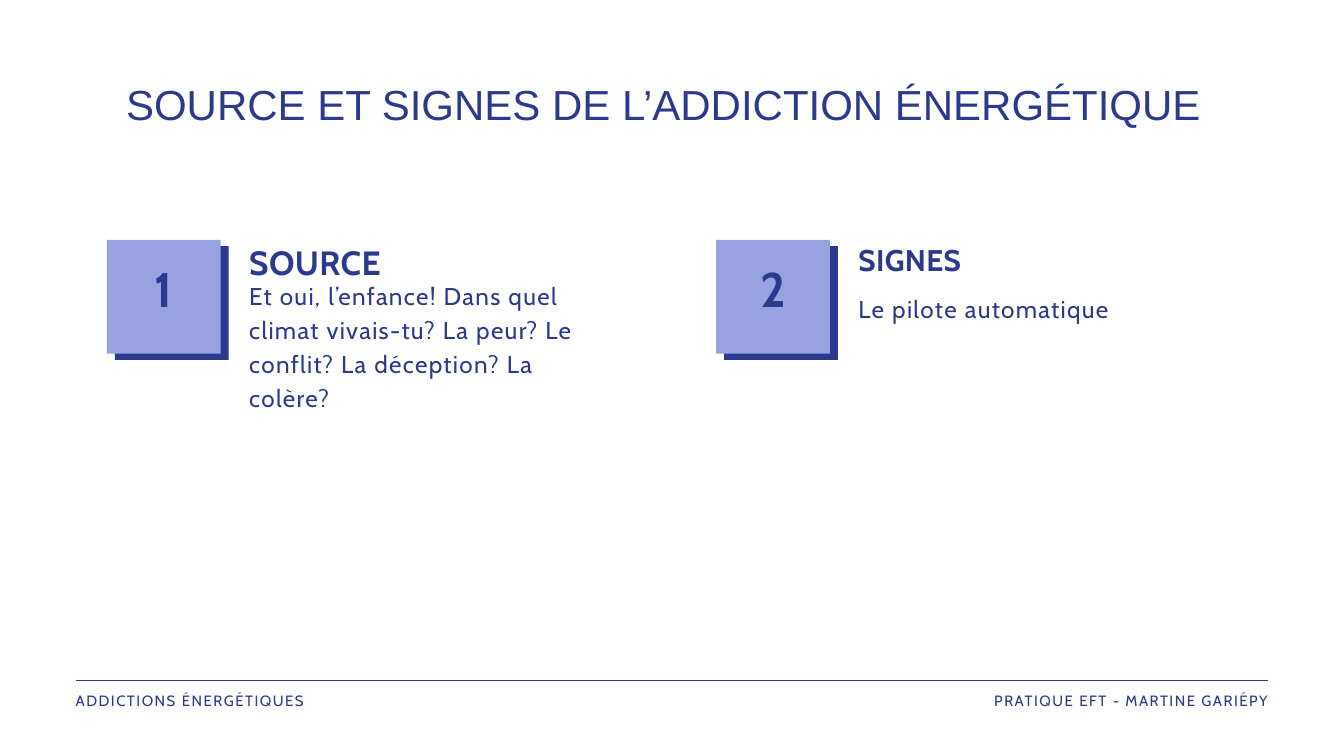
from dataclasses import dataclass

from pptx import Presentation
from pptx.dml.color import RGBColor
from pptx.enum.shapes import MSO_CONNECTOR, MSO_SHAPE
from pptx.enum.text import MSO_ANCHOR, MSO_AUTO_SIZE, PP_ALIGN
from pptx.oxml.ns import qn
from pptx.util import Cm, Pt

STRAIGHT = MSO_CONNECTOR.STRAIGHT
RECTANGLE = MSO_SHAPE.RECTANGLE
TOP, MIDDLE = MSO_ANCHOR.TOP, MSO_ANCHOR.MIDDLE
GROW, FIXED = MSO_AUTO_SIZE.SHAPE_TO_FIT_TEXT, MSO_AUTO_SIZE.NONE
LEFT, CENTER, RIGHT = PP_ALIGN.LEFT, PP_ALIGN.CENTER, PP_ALIGN.RIGHT


@dataclass(frozen=True)
class Theme:
    """Colours, fonts and type sizes of the slide."""
    navy: RGBColor = RGBColor(0x2B, 0x39, 0x8E)
    lavender: RGBColor = RGBColor(0x98, 0xA2, 0xE1)
    title_font: str = "Arial"
    text_font: str = "Cabin"
    title: float = 45
    number: float = 52
    source_heading: float = 36
    signs_heading: float = 32
    body: float = 26
    footer: float = 16
    leading: float = 1.4


THEME = Theme()
SQUARE = 4.3
COLUMN_LEFT = 4.04
COLUMN_PITCH = 23.03
SQUARE_TOP = 9.07
COLUMNS = [
    {"heading": "SOURCE", "size": THEME.source_heading, "tracking": 0.4,
     "heading_top": 8.89, "heading_height": 1.7, "body_top": 10.44, "body_height": 5.05,
     "body": "Et oui, l’enfance! Dans quel climat vivais-tu? La peur? "
             "Le conflit? La déception? La colère?"},
    {"heading": "SIGNES", "size": THEME.signs_heading, "tracking": 0.3,
     "heading_top": 8.92, "heading_height": 1.5, "body_top": 10.94, "body_height": 1.24,
     "body": "Le pilote automatique"},
]


def add_text(page, text, left, top, width, height, *, size, font=THEME.text_font,
             bold=False, tracking=0, align=LEFT, anchor=TOP, inset=0, fit=GROW):
    """Add a one-paragraph text box."""
    box = page.shapes.add_textbox(Cm(left), Cm(top), Cm(width), Cm(height))
    frame = box.text_frame
    frame.word_wrap = True
    frame.auto_size = fit
    frame.vertical_anchor = anchor
    frame.margin_left = frame.margin_right = Cm(inset)
    frame.margin_top = frame.margin_bottom = Cm(inset)
    para = frame.paragraphs[0]
    para.alignment = align
    para.line_spacing = Pt(size * THEME.leading)
    span = para.add_run()
    span.text = text
    span.font.name = font
    span.font.size = Pt(size)
    span.font.bold = bold
    span.font.color.rgb = THEME.navy
    span.font._element.set("spc", str(round(tracking * 100)))


def add_square(page, left, top, color):
    """Add a plain filled square."""
    square = page.shapes.add_shape(RECTANGLE, Cm(left), Cm(top), Cm(SQUARE), Cm(SQUARE))
    square.shadow.inherit = False
    square.fill.solid()
    square.fill.fore_color.rgb = color
    square.line.fill.background()


def add_rule(page, left, right, top):
    """Add the thin horizontal footer line."""
    rule = page.shapes.add_connector(STRAIGHT, Cm(left), Cm(top), Cm(right), Cm(top))
    rule.line.color.rgb = THEME.navy
    rule.line.width = Pt(0.75)
    properties = rule._element.spPr
    properties.append(properties.makeelement(qn("a:effectLst"), {}))


def add_column(page, number, column):
    """Add a numbered square with its heading and body."""
    left = COLUMN_LEFT + (number - 1) * COLUMN_PITCH
    add_square(page, left + 0.3, SQUARE_TOP + 0.24, THEME.navy)
    add_square(page, left, SQUARE_TOP, THEME.lavender)
    add_text(page, str(number), left, 8.08, SQUARE, 5.28, size=THEME.number, bold=True,
             tracking=5.3, align=CENTER, anchor=MIDDLE, inset=0.15, fit=FIXED)
    text_left, text_width = left + 5.38, 13.51
    add_text(page, column["heading"], text_left, column["heading_top"], text_width,
             column["heading_height"], size=column["size"], bold=True,
             tracking=column["tracking"])
    add_text(page, column["body"], text_left, column["body_top"], text_width,
             column["body_height"], size=THEME.body, tracking=1.43)


def add_footer(page):
    """Add the footer line and its two labels."""
    left, right, top, height = 2.86, 47.94, 26.03, 0.74
    add_rule(page, left, right, 25.72)
    add_text(page, "ADDICTIONS ÉNERGÉTIQUES", left, top, 21.54, height,
             size=THEME.footer, tracking=1.64)
    add_text(page, "PRATIQUE EFT - MARTINE GARIÉPY", right - 12.55, top, 12.55, height,
             size=THEME.footer, tracking=1.64, align=RIGHT)


def main():
    """Build and save the slide."""
    deck = Presentation()
    deck.slide_width, deck.slide_height = Cm(50.8), Cm(28.58)
    page = deck.slides.add_slide(deck.slide_layouts[6])
    add_text(page, "SOURCE ET SIGNES DE L’ADDICTION ÉNERGÉTIQUE", 3.56, 2.64, 43.05, 2.08,
             size=THEME.title, font=THEME.title_font, align=CENTER)
    for number, column in enumerate(COLUMNS, start=1):
        add_column(page, number, column)
    add_footer(page)
    deck.save("out.pptx")


if __name__ == "__main__":
    main()
